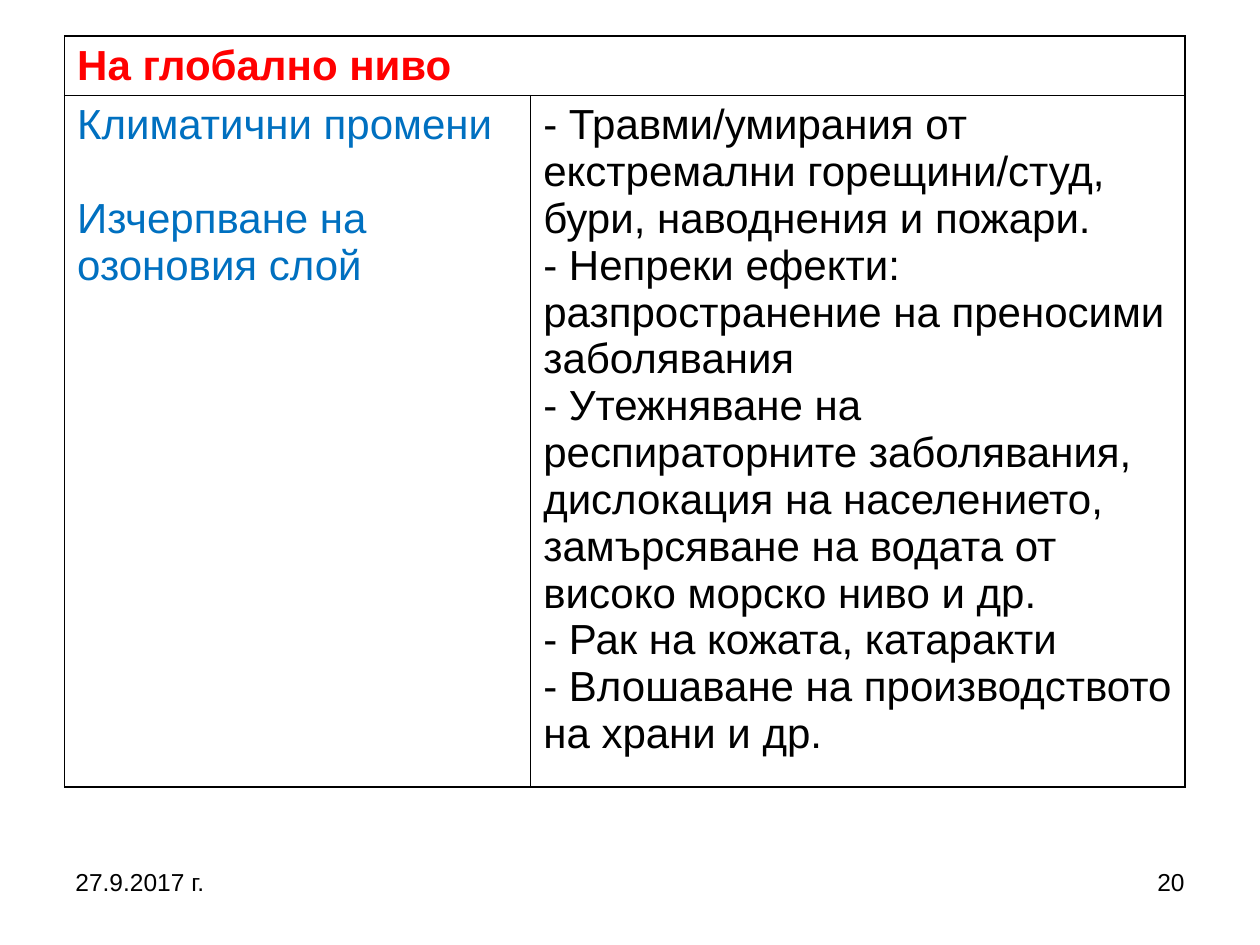
from dataclasses import dataclass

from lxml.etree import SubElement
from pptx import Presentation
from pptx.dml.color import RGBColor as RGB
from pptx.enum.text import PP_ALIGN as Align
from pptx.oxml.ns import qn
from pptx.util import Pt


@dataclass(frozen=True)
class Theme:
    font: str = "Arial"
    ink: str = "000000"
    heading: str = "FF0000"
    topic: str = "0070C0"
    table_size: float = 24
    footer_size: float = 14
    topic_gap: float = 26.8
    border: float = 1


class SlideBuilder:
    def __init__(self, slide, theme):
        self.slide = slide
        self.theme = theme

    def add_lines(self, frame, lines, size, color, bold=False, align=Align.LEFT, gap=0):
        frame.word_wrap = True
        for index, line in enumerate(lines):
            paragraph = frame.add_paragraph() if index else frame.paragraphs[0]
            paragraph.alignment = align
            if index and gap:
                paragraph.space_before = Pt(gap)
            run = paragraph.add_run()
            run.text = line
            run.font.name = self.theme.font
            run.font.size = Pt(size)
            run.font.bold = bold
            run.font.color.rgb = RGB.from_string(color)

    def outline(self, cell):
        cell.fill.background()
        properties = cell._tc.get_or_add_tcPr()
        for position, side in enumerate(("lnL", "lnR", "lnT", "lnB")):
            line = SubElement(properties, qn(f"a:{side}"), w=str(Pt(self.theme.border)))
            fill = SubElement(line, qn("a:solidFill"))
            SubElement(fill, qn("a:srgbClr"), val=self.theme.ink)
            properties.insert(position, line)

    def table(self, left, top, widths, heights):
        table = self.slide.shapes.add_table(
            len(heights), len(widths), Pt(left), Pt(top),
            Pt(sum(widths)), Pt(sum(heights))).table
        table.first_row = table.horz_banding = False
        for column, width in zip(table.columns, widths):
            column.width = Pt(width)
        for row, height in zip(table.rows, heights):
            row.height = Pt(height)
        for cell in table.iter_cells():
            self.outline(cell)
        return table

    def footer(self, left, text, align):
        box = self.slide.shapes.add_textbox(Pt(left), Pt(492), Pt(168), Pt(37.5))
        self.add_lines(box.text_frame, [text], self.theme.footer_size,
                       self.theme.ink, align=align)


TOPICS = ["Климатични промени", "Изчерпване на озоновия слой"]
EFFECTS = [
    "- Травми/умирания от екстремални горещини/студ, бури, наводнения и пожари.",
    "- Непреки ефекти: разпространение на преносими заболявания",
    "- Утежняване на респираторните заболявания, дислокация на населението, "
    "замърсяване на водата от високо морско ниво и др.",
    "- Рак на кожата, катаракти",
    "- Влошаване на производството на храни и др.",
]


def main():
    deck = Presentation()
    deck.slide_width, deck.slide_height = Pt(720), Pt(540)
    theme = Theme()
    builder = SlideBuilder(deck.slides.add_slide(deck.slide_layouts[6]), theme)

    impacts = builder.table(36.9, 20.6, widths=(266.4, 374), heights=(34, 395.2))
    heading = impacts.cell(0, 0)
    heading.merge(impacts.cell(0, 1))
    builder.add_lines(heading.text_frame, ["На глобално ниво"],
                      theme.table_size, theme.heading, bold=True)
    builder.add_lines(impacts.cell(1, 0).text_frame, TOPICS,
                      theme.table_size, theme.topic, gap=theme.topic_gap)
    builder.add_lines(impacts.cell(1, 1).text_frame, EFFECTS,
                      theme.table_size, theme.ink)

    builder.footer(36, "27.9.2017 г.", Align.LEFT)
    builder.footer(516, "20", Align.RIGHT)
    deck.save("out.pptx")


if __name__ == "__main__":
    main()
